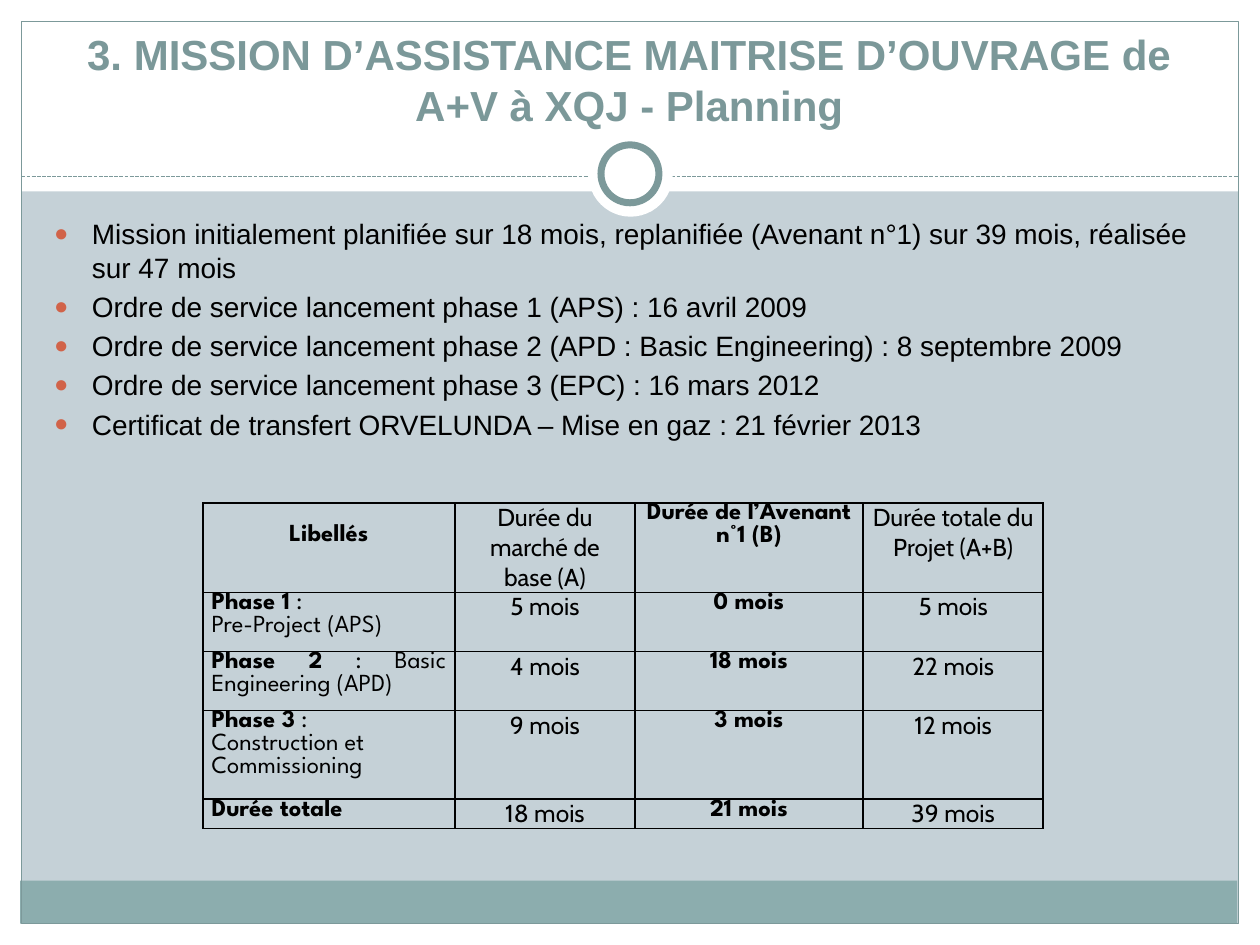
import pptx
import pptx.dml.color
import pptx.enum.dml
import pptx.enum.shapes
import pptx.enum.text
import pptx.oxml
import pptx.oxml.ns
import pptx.util
from lxml import etree
from pptx.util import Inches

ALIGN = pptx.enum.text.PP_ALIGN
SHAPE = pptx.enum.shapes.MSO_SHAPE
WHITE, BLACK, TEAL = "FFFFFF", "000000", "7C999A"
HEADING_FONT, VALUE_FONT = "League Spartan", "Cabin"

TITLE = "3. MISSION D’ASSISTANCE MAITRISE D’OUVRAGE de A+V à XQJ - Planning"
MILESTONES = [
    "Mission initialement planifiée sur 18 mois, replanifiée (Avenant n°1) sur 39 mois, réalisée sur 47 mois",
    "Ordre de service lancement phase 1 (APS) : 16 avril 2009",
    "Ordre de service lancement phase 2 (APD : Basic Engineering) : 8 septembre 2009",
    "Ordre de service lancement phase 3 (EPC) : 16 mars 2012",
    "Certificat de transfert ORVELUNDA – Mise en gaz : 21 février 2013",
]
HEADERS = ["Libellés", "Durée du marché de base (A)", "Durée de l’Avenant n°1 (B)", "Durée totale du Projet (A+B)"]
PHASES = [
    ([("Phase 1", " : "), ("", "Pre-Project (APS)")], 5, 0, 5),
    ([("Phase 2", " : Basic Engineering (APD)")], 4, 18, 22),
    ([("Phase 3", " :"), ("", "Construction et"), ("", "Commissioning")], 9, 3, 12),
    ([("Durée totale", "")], 18, 21, 39),
]
COLUMN_WIDTHS = [2, 1.43, 1.81, 1.43]
ROW_HEIGHTS = [0.7, 0.47, 0.47, 0.7, 0.23]


def color(value):
    return pptx.dml.color.RGBColor.from_string(value)


def add_run(paragraph, text, font, size, fill=BLACK, bold=False):
    run = paragraph.add_run()
    run.text = text
    run.font.name = font
    run.font.size = pptx.util.Pt(size)
    run.font.bold = bold
    run.font.color.rgb = color(fill)


def add_panel(slide, kind, left, top, width, height, fill=None, line=None, line_width=0.75):
    shape = slide.shapes.add_shape(kind, Inches(left), Inches(top), Inches(width), Inches(height))
    shape.shadow.inherit = False
    if fill:
        shape.fill.solid()
        shape.fill.fore_color.rgb = color(fill)
    else:
        shape.fill.background()
    if line:
        shape.line.color.rgb = color(line)
        shape.line.width = pptx.util.Pt(line_width)
    else:
        shape.line.fill.background()


def add_divider(slide, left, right, top):
    connector = slide.shapes.add_connector(
        pptx.enum.shapes.MSO_CONNECTOR.STRAIGHT, Inches(left), Inches(top), Inches(right), Inches(top))
    connector.line.color.rgb = color(TEAL)
    connector.line.width = pptx.util.Pt(0.75)
    connector.line.dash_style = pptx.enum.dml.MSO_LINE.SQUARE_DOT
    etree.SubElement(connector._element.spPr, pptx.oxml.ns.qn("a:effectLst"))


def add_frame(slide):
    add_panel(slide, SHAPE.RECTANGLE, 0, 7.33, 10, 0.17, WHITE)
    add_panel(slide, SHAPE.RECTANGLE, 0, 0, 10, 1.52, WHITE)
    for left in (0, 9.83):
        add_panel(slide, SHAPE.RECTANGLE, left, 0, 0.17, 7.5, WHITE)
    add_panel(slide, SHAPE.RECTANGLE, 0.16, 6.99, 9.66, 0.34, "8CADAE")
    add_panel(slide, SHAPE.RECTANGLE, 0.17, 0.17, 9.66, 7.16, line=TEAL)
    add_divider(slide, 0.17, 9.83, 1.4)
    add_panel(slide, SHAPE.OVAL, 4.67, 1.05, 0.67, 0.67, WHITE)
    add_panel(slide, SHAPE.OVAL, 4.77, 1.15, 0.46, 0.46, WHITE, TEAL, 4)


def place_placeholder(slide, placeholder, left, top, width, height, anchor):
    placeholder.left, placeholder.top = Inches(left), Inches(top)
    placeholder.width, placeholder.height = Inches(width), Inches(height)
    slide.shapes._spTree.append(placeholder._element)
    frame = placeholder.text_frame
    frame.word_wrap = True
    frame.auto_size = pptx.enum.text.MSO_AUTO_SIZE.NONE
    frame.vertical_anchor = anchor
    return frame


def add_title(slide):
    frame = place_placeholder(slide, slide.shapes.title, 0.33, 0.25, 9.33, 0.83,
                              pptx.enum.text.MSO_ANCHOR.BOTTOM)
    paragraph = frame.paragraphs[0]
    paragraph.alignment = ALIGN.CENTER
    add_run(paragraph, TITLE, "Arial", 24, "7B9899", True)


def set_bullet(paragraph):
    properties = paragraph._p.get_or_add_pPr()
    properties.set("marL", str(Inches(0.3)))
    properties.set("indent", str(Inches(-0.3)))
    namespace = pptx.oxml.ns.nsdecls("a")
    for markup in (
        f'<a:buClr {namespace}><a:srgbClr val="D16349"/></a:buClr>',
        f'<a:buSzPct {namespace} val="85000"/>',
        f'<a:buChar {namespace} char="●"/>',
    ):
        properties.append(pptx.oxml.parse_xml(markup))


def add_milestones(slide):
    frame = place_placeholder(slide, slide.placeholders[1], 0.33, 1.67, 9.3, 2,
                              pptx.enum.text.MSO_ANCHOR.TOP)
    for index, text in enumerate(MILESTONES):
        paragraph = frame.add_paragraph() if index else frame.paragraphs[0]
        set_bullet(paragraph)
        add_run(paragraph, text, "Arial", 16)


def set_borders(cell):
    properties = cell._tc.get_or_add_tcPr()
    namespace = pptx.oxml.ns.nsdecls("a")
    for index, side in enumerate(("lnL", "lnR", "lnT", "lnB")):
        properties.insert(index, pptx.oxml.parse_xml(
            f'<a:{side} {namespace} w="12700"><a:solidFill><a:srgbClr val="{BLACK}"/></a:solidFill></a:{side}>'))


def fill_cell(cell, lines, alignment, font):
    cell.fill.background()
    cell.margin_left = cell.margin_right = Inches(0.07)
    cell.margin_top = cell.margin_bottom = 0
    set_borders(cell)
    for index, (strong, plain) in enumerate(lines):
        paragraph = cell.text_frame.add_paragraph() if index else cell.text_frame.paragraphs[0]
        paragraph.alignment = alignment
        for text, bold in ((strong, True), (plain, False)):
            if text:
                add_run(paragraph, text, font, 14, bold=bold)


def add_durations(slide):
    table = slide.shapes.add_table(
        len(ROW_HEIGHTS), len(COLUMN_WIDTHS), Inches(1.61), Inches(3.99),
        Inches(sum(COLUMN_WIDTHS)), Inches(sum(ROW_HEIGHTS))).table
    table.first_row = table.horz_banding = False
    for column, width in zip(table.columns, COLUMN_WIDTHS):
        column.width = Inches(width)
    for row, height in zip(table.rows, ROW_HEIGHTS):
        row.height = Inches(height)
    rows = [[[(HEADERS[0], "")], *HEADERS[1:]]]
    rows += [[label, *(f"{months} mois" for months in durations)] for label, *durations in PHASES]
    for row_index, (label, *values) in enumerate(rows):
        fill_cell(table.cell(row_index, 0), label, ALIGN.JUSTIFY if row_index else ALIGN.CENTER, HEADING_FONT)
        for column_index, value in enumerate(values, 1):
            strong = column_index == 2
            fill_cell(table.cell(row_index, column_index), [(value, "") if strong else ("", value)],
                      ALIGN.CENTER, HEADING_FONT if strong else VALUE_FONT)
    table.cell(0, 0).margin_top = Inches(0.17)


def main():
    presentation = pptx.Presentation()
    presentation.slide_width, presentation.slide_height = Inches(10), Inches(7.5)
    slide = presentation.slides.add_slide(presentation.slide_layouts[1])
    slide.background.fill.solid()
    slide.background.fill.fore_color.rgb = color("C5D1D7")
    add_frame(slide)
    add_title(slide)
    add_milestones(slide)
    add_durations(slide)
    presentation.save("out.pptx")


if __name__ == "__main__":
    main()
